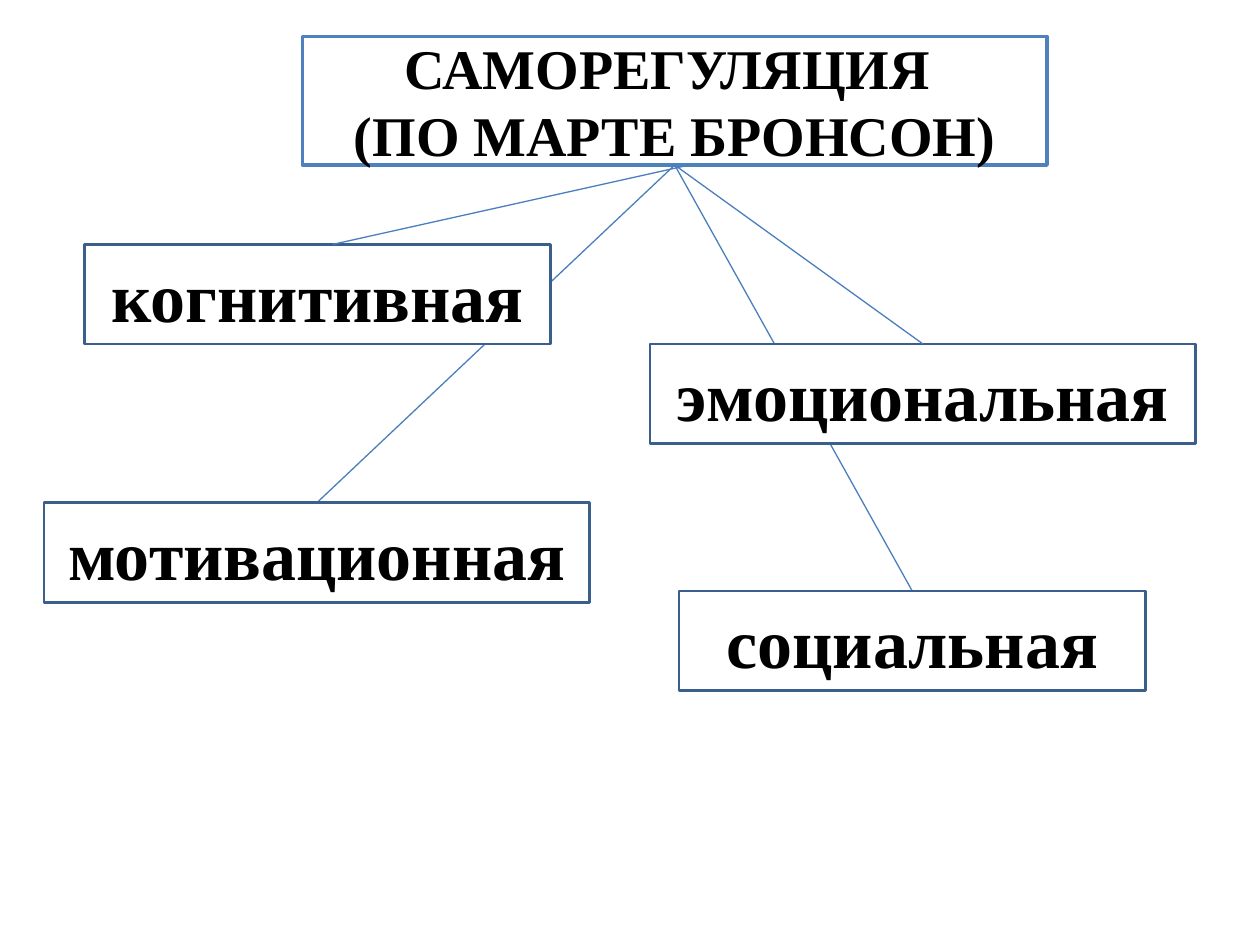
from lxml import etree
from pptx import Presentation
from pptx import util as u
from pptx.dml.color import RGBColor
from pptx.enum import shapes, text
from pptx.oxml.ns import qn

COLORS = {
    "paper": "FFFFFF",
    "text": "000000",
    "title_border": "4F81BD",
    "box_border": "3A5F8C",
    "connector": "4B7EBC",
}
TOP, BOTTOM = 0, 2
BOX_HEIGHT = 0.79


def color(name):
    return RGBColor.from_string(COLORS[name])


def write_text(frame, lines, size, font="Times New Roman", bold=True):
    frame.word_wrap = True
    frame.auto_size = text.MSO_AUTO_SIZE.NONE
    frame.vertical_anchor = text.MSO_ANCHOR.MIDDLE
    paragraph = frame.paragraphs[0]
    paragraph.alignment = text.PP_ALIGN.CENTER
    for index, line in enumerate(lines):
        if index:
            paragraph.add_line_break()
        run = paragraph.add_run()
        run.text = line
        run.font.name = font
        run.font.size = u.Pt(size)
        run.font.bold = bold
        run.font.color.rgb = color("text")


class Diagram:
    def __init__(self, slide):
        self.slide = slide

    def style(self, shape, border, width):
        shape.fill.solid()
        shape.fill.fore_color.rgb = color("paper")
        shape.line.color.rgb = color(border)
        shape.line.width = u.Pt(width)

    def title(self, lines, left, top, width, height):
        shape = self.slide.shapes.title
        shape.left, shape.top = u.Inches(left), u.Inches(top)
        shape.width, shape.height = u.Inches(width), u.Inches(height)
        self.style(shape, "title_border", 2)
        write_text(shape.text_frame, lines, size=32)
        return shape

    def box(self, label, left, top, width):
        shape = self.slide.shapes.add_shape(
            shapes.MSO_SHAPE.RECTANGLE, u.Inches(left), u.Inches(top),
            u.Inches(width), u.Inches(BOX_HEIGHT))
        shape.shadow.inherit = False
        self.style(shape, "box_border", 1.5)
        write_text(shape.text_frame, [label], size=40)
        return shape

    def line(self, start=(0, 0), end=(0, 0)):
        connector = self.slide.shapes.add_connector(
            shapes.MSO_CONNECTOR.STRAIGHT, *map(u.Inches, start + end))
        connector.line.color.rgb = color("connector")
        connector.line.width = u.Pt(0.75)
        etree.SubElement(connector._element.spPr, qn("a:effectLst"))
        return connector

    def join(self, connector, parent, child):
        connector.begin_connect(parent, BOTTOM)
        connector.end_connect(child, TOP)


def main():
    presentation = Presentation()
    presentation.slide_width = u.Inches(10)
    presentation.slide_height = u.Inches(7.5)
    slide = presentation.slides.add_slide(presentation.slide_layouts[5])
    diagram = Diagram(slide)

    title = diagram.title(["САМОРЕГУЛЯЦИЯ ", "(ПО МАРТЕ БРОНСОН)"],
                          2.4, 0.29, 5.91, 1.02)
    social_line = diagram.line()
    motivation_line = diagram.line()

    diagram.box("когнитивная", 0.67, 1.94, 3.7)
    social = diagram.box("социальная", 5.39, 4.69, 3.7)
    emotional = diagram.box("эмоциональная", 5.16, 2.73, 4.33)
    motivation = diagram.box("мотивационная", 0.35, 3.99, 4.33)

    diagram.line((5.47, 1.31), (2.64, 1.94))
    emotional_line = diagram.line()
    for connector, child in ((social_line, social),
                             (motivation_line, motivation),
                             (emotional_line, emotional)):
        diagram.join(connector, title, child)

    presentation.save("out.pptx")


if __name__ == "__main__":
    main()
